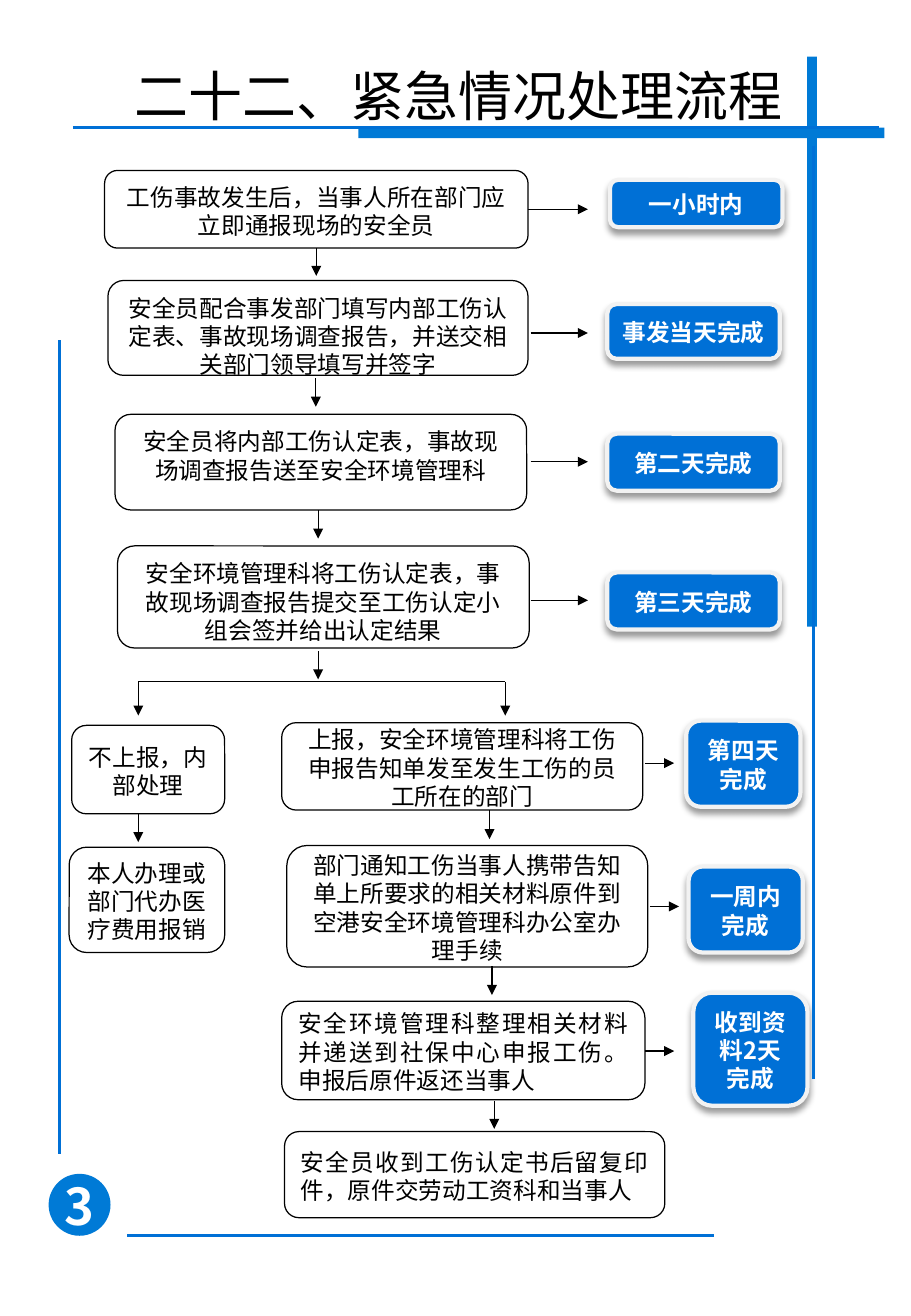
"""Builds the work injury emergency flow slide."""
from lxml import etree
from pptx import Presentation
from pptx.dml.color import RGBColor
from pptx.enum.shapes import MSO_CONNECTOR, MSO_SHAPE
from pptx.enum.text import MSO_ANCHOR, PP_ALIGN
from pptx.oxml.ns import qn
from pptx.util import Pt

LINE = MSO_CONNECTOR.STRAIGHT
RECT, OVAL, ROUND = MSO_SHAPE.RECTANGLE, MSO_SHAPE.OVAL, MSO_SHAPE.ROUNDED_RECTANGLE
TOP, MID = MSO_ANCHOR.TOP, MSO_ANCHOR.MIDDLE
LEFT, CENTER, JUST = PP_ALIGN.LEFT, PP_ALIGN.CENTER, PP_ALIGN.JUSTIFY
FONT = "Noto Sans CJK SC"
HEX = {"blue": "0070D6", "bar": "007AD6", "black": "000000", "white": "FFFFFF", "rim": "F2F2F2"}
RGB = {name: RGBColor.from_string(code) for name, code in HEX.items()}

deck = Presentation()
deck.slide_width, deck.slide_height = Pt(540), Pt(779.76)
slide = deck.slides.add_slide(deck.slide_layouts[5])
shapes = slide.shapes


def write(shape, text, size, color, align, anchor, pitch, pads, bold=False):
    frame = shape.text_frame
    frame.text = text
    frame.word_wrap = True
    frame.vertical_anchor = anchor
    frame.margin_left, frame.margin_top, frame.margin_right, frame.margin_bottom = map(Pt, pads)
    para = frame.paragraphs[0]
    para.alignment, para.line_spacing = align, Pt(pitch)
    font = para.font
    font.name, font.size, font.bold = FONT, Pt(size), bold
    font.color.rgb = RGB[color]
    base = para._p.pPr.find(qn("a:defRPr"))
    etree.SubElement(base, qn("a:ea"), typeface=FONT)


def draw(kind, spot, fill, rim=None, width=0.75):
    shape = shapes.add_shape(kind, *map(Pt, spot))
    shape.shadow.inherit = False
    shape.fill.solid()
    shape.fill.fore_color.rgb = RGB[fill]
    if rim:
        shape.line.color.rgb = RGB[rim]
        shape.line.width = Pt(width)
    else:
        shape.line.fill.background()
    return shape


title = shapes.title
title.left, title.top, title.width, title.height = Pt(74.9), Pt(27.4), Pt(399.6), Pt(48.2)
write(title, "二十二、紧急情况处理流程", 32, "black", LEFT, TOP, 45, (5, 2.9, 5, 2.9))

for bar in [(212.4, 75.6, 311.8, 6.2), (478.4, 33.6, 5.8, 337.7)]:
    draw(RECT, bar, "bar")
disc = draw(OVAL, (28.8, 695.5, 36.7, 36.7), "bar")
write(disc, "3", 30, "white", CENTER, MID, 36, (0, 0, 0, 0), True)

steps = [
    (62, 101, 251, 46, TOP, CENTER, "工伤事故发生后，当事人所在部门应立即通报现场的安全员"),
    (64, 166.2, 249, 56.2, TOP, CENTER,
     "安全员配合事发部门填写内部工伤认定表、事故现场调查报告，并送交相关部门领导填写并签字"),
    (68.2, 245.5, 244, 56.7, TOP, CENTER, "安全员将内部工伤认定表，事故现场调查报告送至安全环境管理科"),
    (69.7, 323.5, 244, 60.5, TOP, CENTER,
     "安全环境管理科将工伤认定表，事故现场调查报告提交至工伤认定小组会签并给出认定结果"),
    (42.5, 429.8, 90.7, 52.4, MID, CENTER, "不上报，内部处理"),
    (41, 502, 92.2, 62.4, MID, CENTER, "本人办理或部门代办医疗费用报销"),
    (167, 428.2, 214, 51.8, MID, CENTER, "上报，安全环境管理科将工伤申报告知单发至发生工伤的员工所在的部门"),
    (170, 501, 214, 72, MID, CENTER,
     "部门通知工伤当事人携带告知单上所要求的相关材料原件到空港安全环境管理科办公室办理手续"),
    (167, 593.3, 215.3, 58.3, MID, JUST,
     "安全环境管理科整理相关材料并递送到社保中心申报工伤。申报后原件返还当事人"),
    (168.7, 670.5, 225.4, 51, MID, JUST, "安全员收到工伤认定书后留复印件，原件交劳动工资科和当事人"),
]
boxes = []
for *spot, anchor, align, text in steps:
    box = draw(ROUND, spot, "white", "black")
    write(box, text, 14, "black", align, anchor, 16.8, (7.2, 5, 7.2, 3.6))
    boxes.append(box)

times = [
    (361.6, 106.6, 102.2, 28, "一小时内"),
    (360, 180.2, 102.2, 32.4, "事发当天完成"),
    (360, 257, 102.2, 33.8, "第二天完成"),
    (360, 339.2, 102.2, 33.8, "第三天完成"),
    (406.8, 427, 67.7, 51, "第四天完成"),
    (408.2, 513.4, 67.7, 51, "一周内完成"),
    (411, 588.2, 67.7, 67, "收到资料2天完成"),
]
for *spot, text in times:
    badge = draw(ROUND, spot, "blue", "rim", 2.5)
    write(badge, text, 14, "white", CENTER, MID, 16.8, (7.2, 4.6, 7.2, 3.6), True)
    glow = badge._element.spPr.find(qn("a:effectLst"))
    shade = etree.SubElement(glow, qn("a:outerShdw"), blurRad=str(Pt(4)), dist=str(Pt(3)),
                             dir="5400000", rotWithShape="0")
    tint = etree.SubElement(shade, qn("a:srgbClr"), val=HEX["black"])
    etree.SubElement(tint, qn("a:alpha"), val="40000")

rules = [(43.2, 75.6, 521.3, 75.6), (75.6, 732.2, 423.4, 732.2),
         (35.3, 201.6, 35.3, 684), (482.4, 86.4, 482.4, 639.4)]
downs = [(187.5, 147, 16.5), (187.2, 224, 17), (188.6, 302.4, 16.8), (188.6, 386, 16.6),
         (82, 404, 20), (299.5, 404, 20), (82, 482.4, 16.6), (290.2, 480.2, 17),
         (291.6, 572.6, 17), (293, 652.3, 16.6)]
rights = [(313, 124, 35.5), (314.6, 197.3, 33.9), (314.6, 273.6, 33.9), (314.6, 355.7, 33.9),
          (382.3, 452.2, 17.3), (385.2, 537.1, 17.3), (382.3, 622.8, 17.3)]
links = [(spot, "blue", 1.75, False) for spot in rules]
links += [((82, 404, 299.5, 404), "black", 0.75, False)]
links += [((x, y, x, y + run), "black", 0.75, True) for x, y, run in downs]
links += [((x, y, x + run, y), "black", 0.75, True) for x, y, run in rights]
joins = {downs[0][:2]: 2, rights[0][:2]: 3}
for spot, color, width, arrow in links:
    link = shapes.add_connector(LINE, *map(Pt, spot))
    link.line.color.rgb = RGB[color]
    link.line.width = Pt(width)
    if arrow:
        etree.SubElement(link.line._get_or_add_ln(), qn("a:tailEnd"), type="triangle")
    etree.SubElement(link._element.spPr, qn("a:effectLst"))
    if spot[:2] in joins:
        link.begin_connect(boxes[0], joins[spot[:2]])

deck.save("out.pptx")
